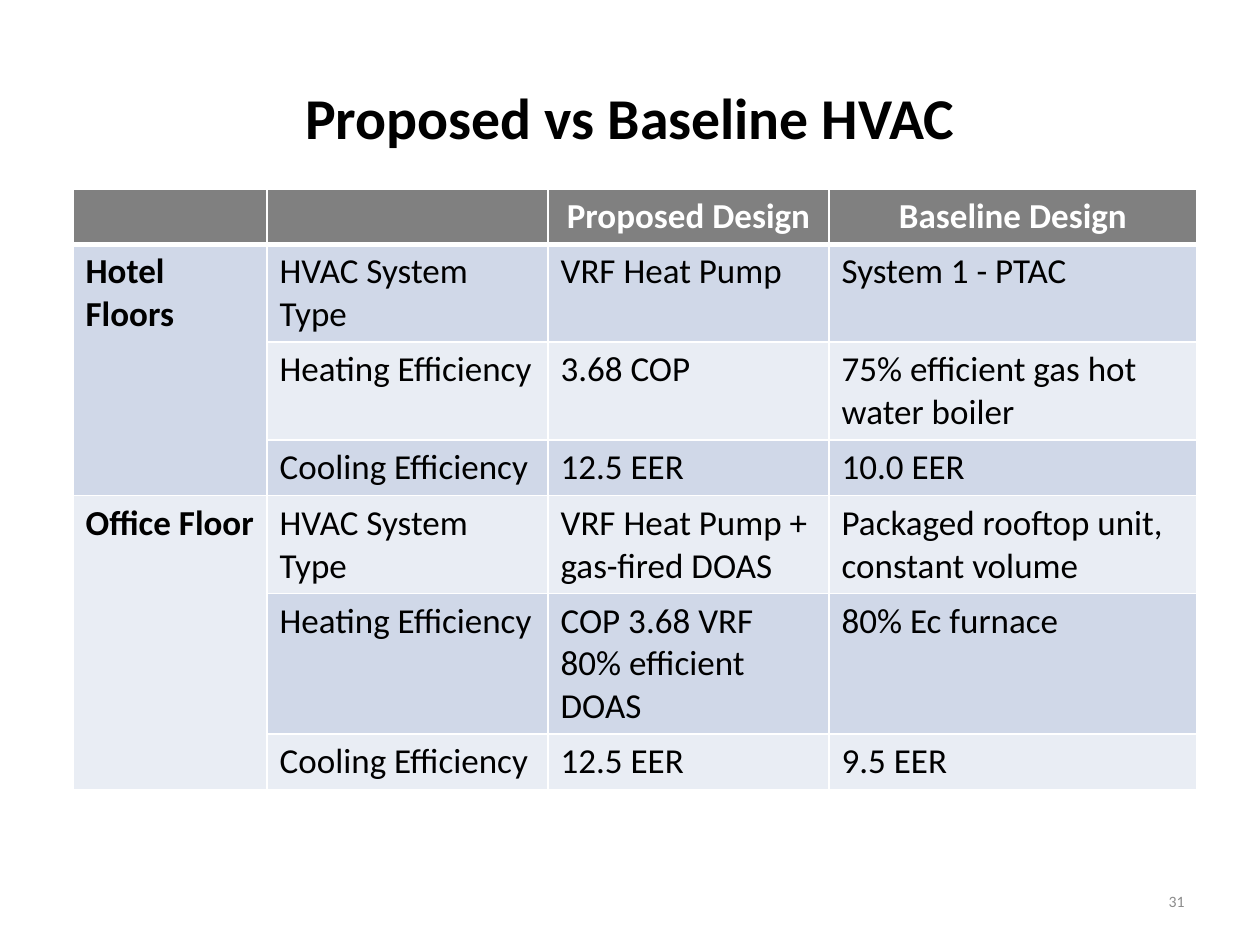
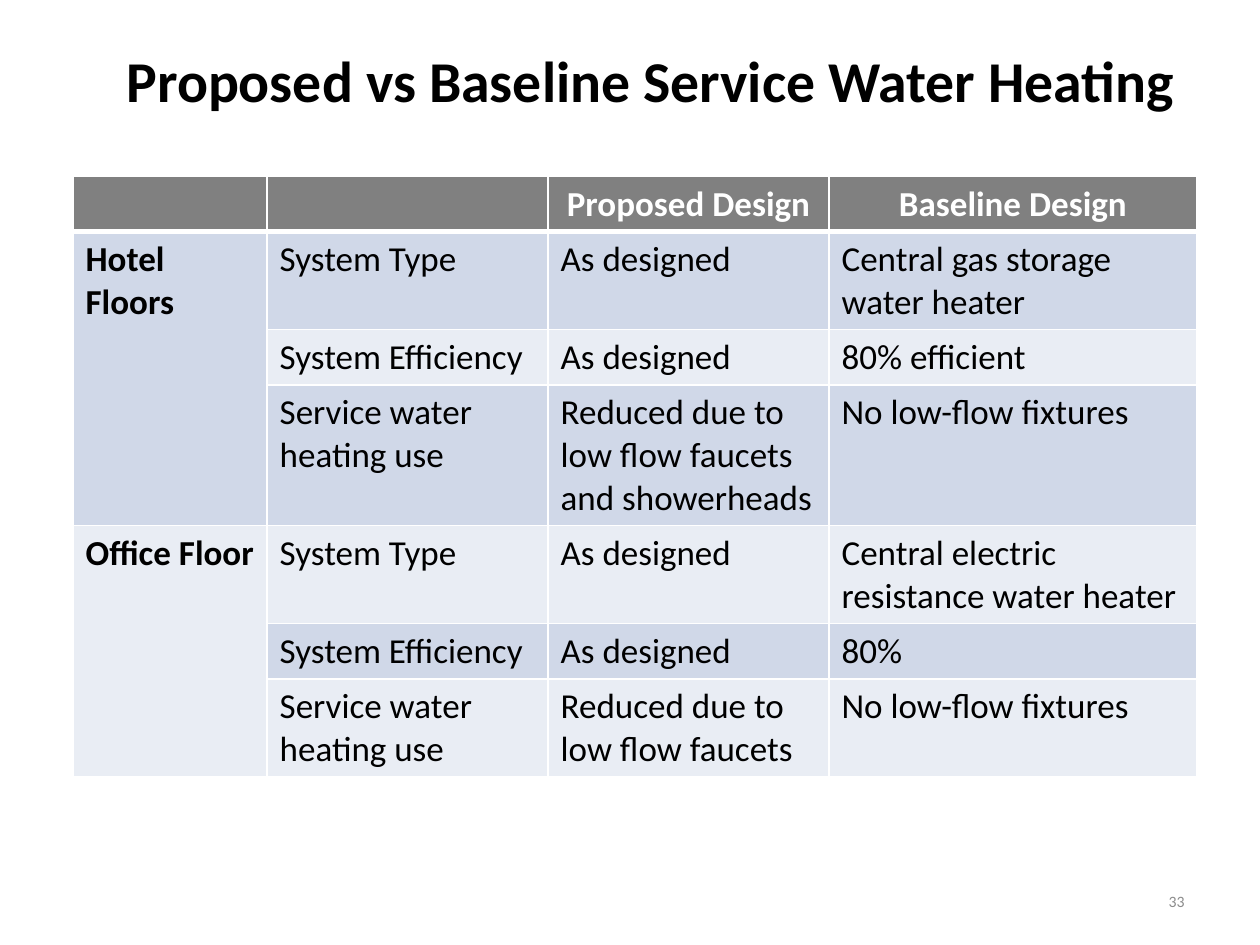
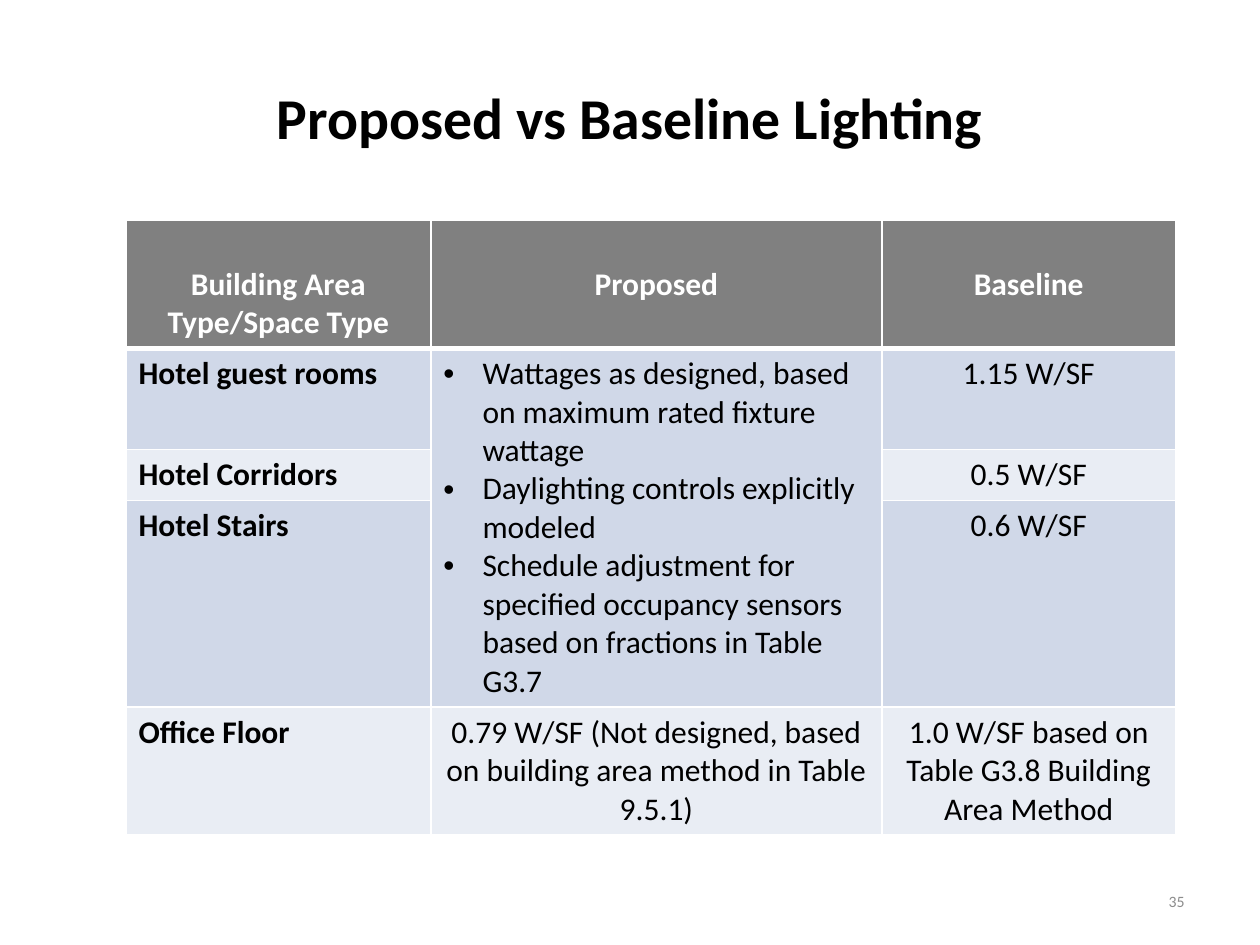
from dataclasses import dataclass

from lxml import etree
from pptx import Presentation
from pptx import util as u
from pptx.dml import color
from pptx.enum import text
from pptx.oxml import ns

COLOURS = {
    "paper": "FFFFFF",
    "ink": "000000",
    "header": "808080",
    "odd_band": "D0D8E8",
    "even_band": "E9EDF4",
    "page_number": "8C8C8C",
}
FONT = "Calibri"
WIDTH, HEIGHT = u.Inches(10), u.Inches(7.5)
LINE_SPACING = 1.22
CELL_PADDING = 7.2
BULLET_INDENT = u.Inches(0.31)
THIN, THICK = 1, 3
LEFT, CENTRE, RIGHT = text.PP_ALIGN.LEFT, text.PP_ALIGN.CENTER, text.PP_ALIGN.RIGHT


@dataclass(frozen=True)
class Area:
    left: float
    top: float
    width: float
    height: float


@dataclass(frozen=True)
class Style:
    size: float
    colour: str = "ink"
    bold: bool = False
    align: text.PP_ALIGN = LEFT


@dataclass(frozen=True)
class Comparison:
    left: float
    top: float
    columns: tuple[float, ...]
    row_lines: tuple[float, ...]
    rows: tuple[tuple, ...]
    size: float = 20
    header_gap_lines: int = 0
    value_align: text.PP_ALIGN = LEFT


@dataclass(frozen=True)
class Page:
    title: str
    title_area: Area
    number: int
    comparison: Comparison


TITLE_AREA = Area(5, 4, 90, 16.67)
HIGH_TITLE_AREA = Area(5, 2.27, 93.3, 12.27)
NUMBER_AREA = Area(71.7, 92.67, 23.3, 5.33)
TITLE_STYLE = Style(33, bold=True, align=CENTRE)
NUMBER_STYLE = Style(9, "page_number", align=RIGHT)
DESIGN_COLUMNS = (15.4, 22.3, 22.3, 29.2)
DESIGN_HEADER = ("", "", "Proposed Design", "Baseline Design")

PAGES = (
    Page("Proposed vs Baseline HVAC", TITLE_AREA, 31, Comparison(
        5.8, 20, DESIGN_COLUMNS, (1, 2, 2, 1, 2, 3, 1), (
            DESIGN_HEADER,
            ("Hotel Floors", "HVAC System Type", "VRF Heat Pump", "System 1 - PTAC"),
            (None, "Heating Efficiency", "3.68 COP", "75% efficient gas hot water boiler"),
            (None, "Cooling Efficiency", "12.5 EER", "10.0 EER"),
            ("Office Floor", "HVAC System Type", "VRF Heat Pump + gas-fired DOAS",
             "Packaged rooftop unit, constant volume"),
            (None, "Heating Efficiency", "COP 3.68 VRF 80% efficient DOAS", "80% Ec furnace"),
            (None, "Cooling Efficiency", "12.5 EER", "9.5 EER"),
        ))),
    Page("Proposed vs Baseline Service Water Heating", HIGH_TITLE_AREA, 33, Comparison(
        5.8, 18.67, DESIGN_COLUMNS, (1, 2, 1, 3, 2, 1, 2), (
            DESIGN_HEADER,
            ("Hotel Floors", "System Type", "As designed", "Central gas storage water heater"),
            (None, "System Efficiency", "As designed", "80% efficient"),
            (None, "Service water heating use",
             "Reduced due to low flow faucets and showerheads", "No low-flow fixtures"),
            ("Office Floor", "System Type", "As designed",
             "Central electric resistance water heater"),
            (None, "System Efficiency", "As designed", "80%"),
            (None, "Service water heating use", "Reduced due to low flow faucets",
             "No low-flow fixtures"),
        ))),
    Page("Proposed vs Baseline Lighting", TITLE_AREA, 35, Comparison(
        10, 23.33, (24.2, 35.8, 23.3), (3, 2.3, 1, 5.05, 3), (
            ("Building Area Type/Space Type", "Proposed", "Baseline"),
            ("Hotel guest rooms", (
                "Wattages as designed, based on maximum rated fixture wattage",
                "Daylighting controls explicitly modeled",
                "Schedule adjustment for specified occupancy sensors based on "
                "fractions in Table G3.7",
            ), "1.15 W/SF"),
            ("Hotel Corridors", None, "0.5 W/SF"),
            ("Hotel Stairs", None, "0.6 W/SF"),
            ("Office Floor",
             "0.79 W/SF (Not designed, based on building area method in Table 9.5.1)",
             "1.0 W/SF based on Table G3.8 Building Area Method"),
        ), size=18, header_gap_lines=1, value_align=CENTRE)),
)


def across(percent: float) -> int:
    return round(WIDTH * percent / 100)


def down(percent: float) -> int:
    return round(HEIGHT * percent / 100)


def rgb(name: str) -> color.RGBColor:
    return color.RGBColor.from_string(COLOURS[name])


def write(paragraph, words: str, style: Style) -> None:
    paragraph.alignment = style.align
    run = paragraph.add_run()
    run.text = words
    run.font.name = FONT
    run.font.size = u.Pt(style.size)
    run.font.bold = style.bold
    run.font.color.rgb = rgb(style.colour)


def add_label(slide, area: Area, words: str, style: Style) -> None:
    frame = slide.shapes.add_textbox(
        across(area.left), down(area.top), across(area.width), down(area.height)).text_frame
    frame.word_wrap = True
    frame.vertical_anchor = text.MSO_ANCHOR.MIDDLE
    write(frame.paragraphs[0], words, style)


def add_bullet(paragraph) -> None:
    properties = paragraph._p.get_or_add_pPr()
    properties.set("marL", str(BULLET_INDENT))
    properties.set("indent", str(-BULLET_INDENT))
    etree.SubElement(properties, ns.qn("a:buFont")).set("typeface", "Arial")
    etree.SubElement(properties, ns.qn("a:buChar")).set("char", "•")


def rule_cell(cell, row: int) -> None:
    properties = cell._tc.get_or_add_tcPr()
    weights = {"L": THIN, "R": THIN,
               "T": THICK if row == 1 else THIN,
               "B": THICK if row == 0 else THIN}
    for side, weight in weights.items():
        line = etree.SubElement(properties, ns.qn(f"a:ln{side}"))
        line.set("w", str(u.Pt(weight)))
        fill = etree.SubElement(line, ns.qn("a:solidFill"))
        etree.SubElement(fill, ns.qn("a:srgbClr")).set("val", COLOURS["paper"])


def band_name(row: int) -> str:
    if row == 0:
        return "header"
    return "odd_band" if row % 2 else "even_band"


def cell_style(comparison: Comparison, row: int, column: int) -> Style:
    if row == 0:
        return Style(comparison.size, "paper", True, CENTRE)
    if column == 0:
        return Style(comparison.size, bold=True)
    return Style(comparison.size, align=comparison.value_align)


def fill_cell(cell, content, style: Style) -> None:
    frame = cell.text_frame
    if isinstance(content, str):
        if content:
            write(frame.paragraphs[0], content, style)
        return
    for index, point in enumerate(content):
        paragraph = frame.add_paragraph() if index else frame.paragraphs[0]
        write(paragraph, point, Style(style.size))
        add_bullet(paragraph)


def add_comparison(slide, comparison: Comparison) -> None:
    line_height = comparison.size * LINE_SPACING
    heights = [u.Pt(lines * line_height + CELL_PADDING) for lines in comparison.row_lines]
    table = slide.shapes.add_table(
        len(comparison.rows), len(comparison.columns),
        across(comparison.left), down(comparison.top),
        across(sum(comparison.columns)), sum(heights)).table
    for column, share in zip(table.columns, comparison.columns):
        column.width = across(share)
    for row, height in zip(table.rows, heights):
        row.height = height

    for column in range(len(comparison.columns)):
        start = 0
        for row, contents in enumerate(comparison.rows):
            cell, content = table.cell(row, column), contents[column]
            if content is not None:
                start = row
                fill_cell(cell, content, cell_style(comparison, row, column))
            if row == 0:
                cell.margin_top = u.Pt(
                    CELL_PADDING / 2 + comparison.header_gap_lines * line_height)
            rule_cell(cell, row)
            cell.fill.solid()
            cell.fill.fore_color.rgb = rgb(band_name(start))
            following = comparison.rows[row + 1:row + 2]
            if start < row and not (following and following[0][column] is None):
                table.cell(start, column).merge(cell)


def main() -> None:
    deck = Presentation()
    deck.slide_width, deck.slide_height = WIDTH, HEIGHT
    for page in PAGES:
        slide = deck.slides.add_slide(deck.slide_layouts[6])
        add_label(slide, page.title_area, page.title, TITLE_STYLE)
        add_comparison(slide, page.comparison)
        add_label(slide, NUMBER_AREA, str(page.number), NUMBER_STYLE)
    deck.save("out.pptx")


if __name__ == "__main__":
    main()
